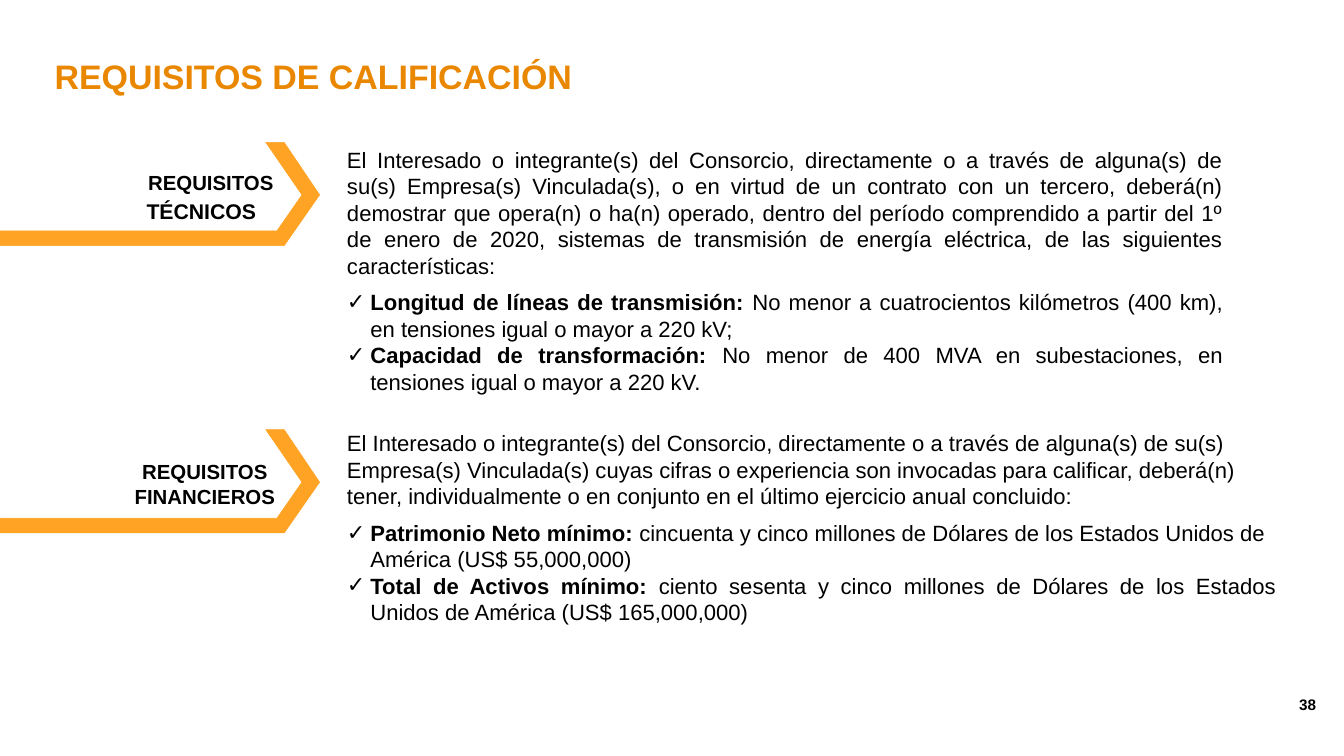
from pptx import Presentation
from pptx.dml.color import RGBColor
from pptx.enum.shapes import MSO_SHAPE
from pptx.enum.text import MSO_ANCHOR, PP_ALIGN
from pptx.oxml.ns import qn
from pptx.util import Cm, Pt
from lxml import etree

LEFT, MID, RIGHT, JUST = PP_ALIGN.LEFT, PP_ALIGN.CENTER, PP_ALIGN.RIGHT, PP_ALIGN.JUSTIFY
RECT = MSO_SHAPE.RECTANGLE
TOP = MSO_ANCHOR.TOP
ORANGE = "FFA325"


def color(code):
    return RGBColor.from_string(code)


def write(para, text, size=26, bold=False, ink="000000", align=LEFT):
    para.alignment = align
    run = para.add_run()
    run.text = text
    font = run.font
    font.name, font.size, font.bold = "Arial", Pt(size), bold
    font.color.rgb = color(ink)


deck = Presentation()
deck.slide_width, deck.slide_height = Cm(55.85), Cm(31.42)
slide = deck.slides.add_slide(deck.slide_layouts[6])
shapes = slide.shapes

title = shapes.add_textbox(Cm(2.02), Cm(2.18), Cm(22.25), Cm(1.96)).text_frame
title.word_wrap = False
write(title.paragraphs[0], "REQUISITOS DE CALIFICACIÓN", size=40, bold=True, ink="EA8700")

labels = [
    (5.84, 6.96, 5.84, 1.2, ["REQUISITOS"]),
    (5.31, 18.96, 6.4, 2.31, ["REQUISITOS", "FINANCIEROS"]),
]
for x, y, w, h, lines in labels:
    frame = shapes.add_textbox(Cm(x), Cm(y), Cm(w), Cm(h)).text_frame
    frame.word_wrap = False
    for i, line in enumerate(lines):
        para = frame.add_paragraph() if i else frame.paragraphs[0]
        write(para, line, size=24, bold=True, align=MID)

tech = shapes.add_shape(RECT, Cm(5.84), Cm(8.1), Cm(5.84), Cm(1.32))
tech.shadow.inherit = False
tech.fill.solid()
tech.fill.fore_color.rgb = color("FFFFFF")
tech.line.fill.background()
tech.text_frame.vertical_anchor = TOP
write(tech.text_frame.paragraphs[0], "TÉCNICOS", size=25, bold=True)

bodies = [
    (5.96, 38.2, 10.69, JUST,
     "El Interesado o integrante(s) del Consorcio, directamente o a través de alguna(s) de "
     "su(s) Empresa(s) Vinculada(s), o en virtud de un contrato con un tercero, deberá(n) "
     "demostrar que opera(n) o ha(n) operado, dentro del período comprendido a partir del 1º "
     "de enero de 2020, sistemas de transmisión de energía eléctrica, de las siguientes "
     "características:",
     [("Longitud de líneas de transmisión: ",
       "No menor a cuatrocientos kilómetros (400 km), en tensiones igual o mayor a 220 kV;", JUST),
      ("Capacidad de transformación: ",
       "No menor de 400 MVA en subestaciones, en tensiones igual o mayor a 220 kV.", JUST)]),
    (17.73, 40.41, 8.46, LEFT,
     "El Interesado o integrante(s) del Consorcio, directamente o a través de alguna(s) de su(s) "
     "Empresa(s) Vinculada(s) cuyas cifras o experiencia son invocadas para calificar, deberá(n) "
     "tener, individualmente o en conjunto en el último ejercicio anual concluido:",
     [("Patrimonio Neto mínimo: ",
       "cincuenta y cinco millones de Dólares de los Estados Unidos de América (US$ 55,000,000)", LEFT),
      ("Total de Activos mínimo: ",
       "ciento sesenta y cinco millones de Dólares de los Estados Unidos de América "
       "(US$ 165,000,000)", JUST)]),
]
for y, w, h, align, intro, items in bodies:
    frame = shapes.add_textbox(Cm(12.9), Cm(y), Cm(w), Cm(h)).text_frame
    frame.word_wrap = True
    para = frame.paragraphs[0]
    para.level = 1
    props = para._p.get_or_add_pPr()
    props.set("marL", str(Cm(1.27)))
    props.set("indent", "0")
    write(para, intro, align=align)
    for i, (head, rest, align) in enumerate(items):
        para = frame.add_paragraph()
        para.level = 1
        props = para._p.get_or_add_pPr()
        props.set("marL", str(Cm(2.24)))
        props.set("indent", str(Cm(-0.97)))
        etree.SubElement(props, qn("a:buFont")).set("typeface", "Arial")
        etree.SubElement(props, qn("a:buChar")).set("char", "✓")
        if i == 0:
            para.space_before = Pt(12)
        write(para, head, bold=True, align=align)
        write(para, rest, align=align)

number = shapes.add_textbox(Cm(50.75), Cm(28.75), Cm(4.19), Cm(1.47)).text_frame
number.word_wrap = True
write(number.paragraphs[0], "38", size=18, bold=True, align=RIGHT)

corners = [(11.05, 0), (12.55, 2.18), (11.51, 3.68), (0, 3.68),
           (0, 4.29), (11.81, 4.29), (13.28, 2.18), (11.81, 0)]
for y in (5.92, 17.86):
    points = [(Cm(dx), Cm(y + dy)) for dx, dy in corners]
    pen = shapes.build_freeform(*points[0])
    pen.add_line_segments(points[1:], close=True)
    arrow = pen.convert_to_shape()
    arrow.shadow.inherit = False
    arrow.fill.solid()
    arrow.fill.fore_color.rgb = color(ORANGE)
    arrow.line.color.rgb = color(ORANGE)
    arrow.line.width = Pt(0)

deck.save("out.pptx")
